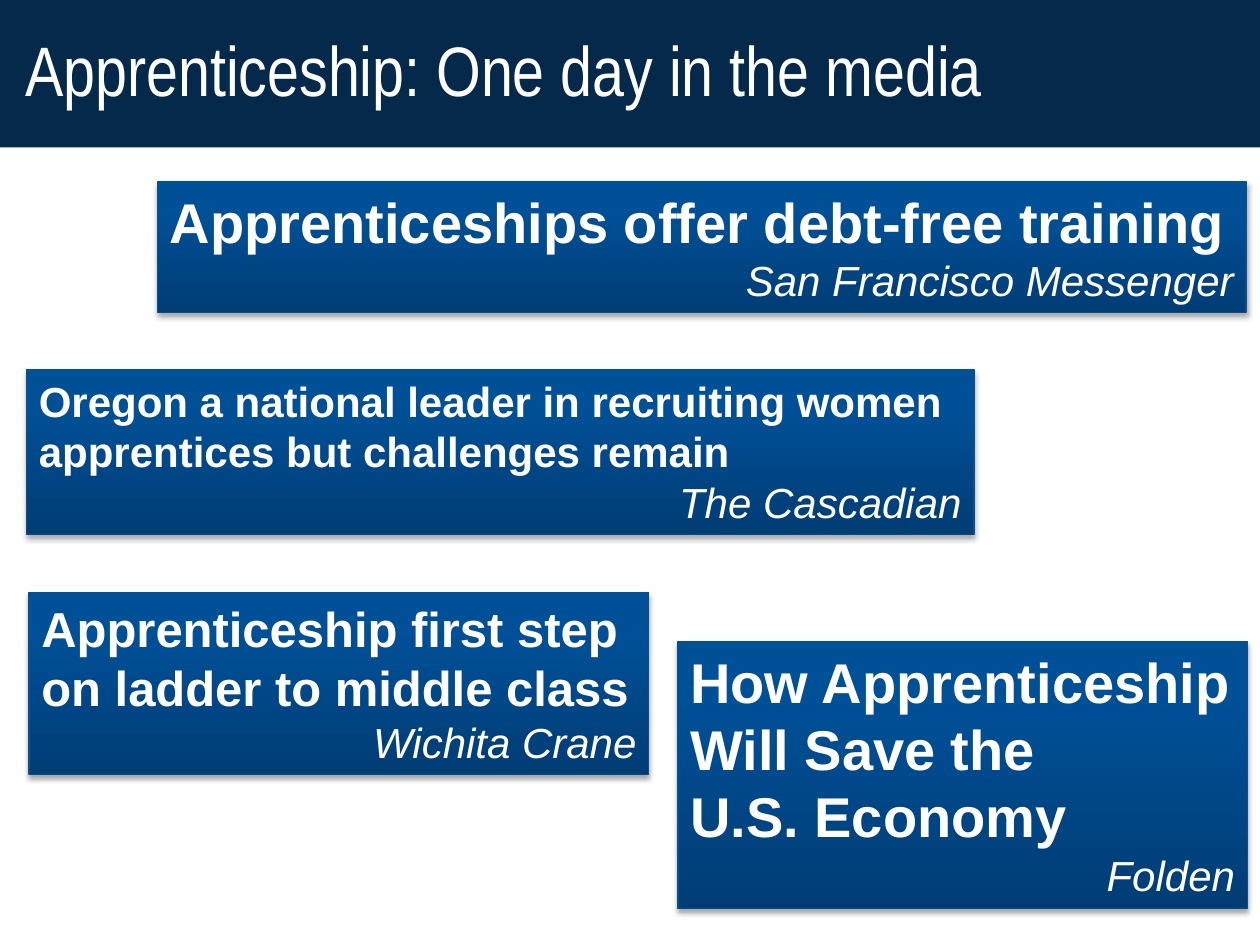
from copy import deepcopy

from lxml.etree import SubElement
from pptx import Presentation
from pptx.dml.color import RGBColor
from pptx.enum.text import MSO_ANCHOR, MSO_AUTO_SIZE, PP_ALIGN
from pptx.oxml.ns import qn
from pptx.util import Inches, Pt

NAVY = RGBColor(0x04, 0x29, 0x4A)
WHITE = RGBColor(0xFF, 0xFF, 0xFF)
OUTLINE = RGBColor(0x04, 0x50, 0x95)
GRADIENT = [
    (0, RGBColor(0x00, 0x3D, 0x75)),
    (0.8, RGBColor(0x00, 0x50, 0x98)),
    (1, RGBColor(0x00, 0x50, 0x99)),
]

HEADLINES = [
    ((5.38, 5.09, 4.52, 2.12), 32,
     ["How Apprenticeship", "Will Save the", "U.S. Economy"], "Folden"),
    ((0.23, 4.7, 4.92, 1.45), 28,
     ["Apprenticeship first step", "on ladder to middle class"], "Wichita Crane"),
    ((1.25, 1.44, 8.64, 1.04), 32,
     ["Apprenticeships offer debt-free training"], "San Francisco Messenger"),
    ((0.21, 2.93, 7.52, 1.31), 24,
     ["Oregon a national leader in recruiting women",
      "apprentices but challenges remain"], "The Cascadian"),
]


def fill_gradient(shape):
    """Fill the shape with the blue gradient, darkest at the bottom."""
    shape.fill.gradient()
    shape.fill.gradient_angle = 90
    stops = shape.element.spPr.find(qn("a:gradFill")).find(qn("a:gsLst"))
    stops.append(deepcopy(stops[-1]))
    for stop, (position, color) in zip(shape.fill.gradient_stops, GRADIENT):
        stop.position = position
        stop.color.rgb = color


def add_shadow(shape):
    """Give the shape a soft shadow falling straight down."""
    effects = SubElement(shape.element.spPr, qn("a:effectLst"))
    shadow = SubElement(effects, qn("a:outerShdw"), blurRad=str(Pt(3.1)),
                        dist=str(Pt(1.8)), dir="5400000", rotWithShape="0")
    color = SubElement(shadow, qn("a:srgbClr"), val="000000")
    SubElement(color, qn("a:alpha"), val="35000")


def format_title(slide, box, text):
    """Turn the title placeholder into the banner."""
    title = slide.shapes.title
    title.left, title.top, title.width, title.height = map(Inches, box)
    title.fill.solid()
    title.fill.fore_color.rgb = NAVY
    frame = title.text_frame
    frame.text = text
    frame.word_wrap = True
    frame.auto_size = MSO_AUTO_SIZE.NONE
    frame.vertical_anchor = MSO_ANCHOR.MIDDLE
    frame.margin_left = frame.margin_right = Inches(0.2)
    frame.margin_top = frame.margin_bottom = Inches(0.1)
    paragraph = frame.paragraphs[0]
    paragraph.alignment = PP_ALIGN.LEFT
    paragraph.line_spacing = 0.9
    paragraph.font.name = "Arial Narrow"
    paragraph.font.size = Pt(40)
    paragraph.font.color.rgb = WHITE


def add_headline(slide, box, size, lines, publication):
    """Add a card with a bold headline and its publication."""
    card = slide.shapes.add_textbox(*map(Inches, box))
    fill_gradient(card)
    card.line.color.rgb = OUTLINE
    card.line.width = Pt(0.75)
    add_shadow(card)
    frame = card.text_frame
    frame.word_wrap = True
    frame.margin_right = Inches(0.1)
    frame.text = "\n".join([*lines, publication])
    for paragraph in frame.paragraphs:
        paragraph.font.name = "Arial"
        paragraph.font.size = Pt(size)
        paragraph.font.bold = True
        paragraph.font.color.rgb = WHITE
    source = frame.paragraphs[-1]
    source.alignment = PP_ALIGN.RIGHT
    source.font.size = Pt(24)
    source.font.bold = False
    source.font.italic = True


def main():
    """Build and save the presentation."""
    presentation = Presentation()
    presentation.slide_width = Inches(10)
    presentation.slide_height = Inches(7.5)
    slide = presentation.slides.add_slide(presentation.slide_layouts[5])
    format_title(slide, (0, 0, 10, 1.17), "Apprenticeship: One day in the media")
    for headline in HEADLINES:
        add_headline(slide, *headline)
    presentation.save("out.pptx")


if __name__ == "__main__":
    main()
